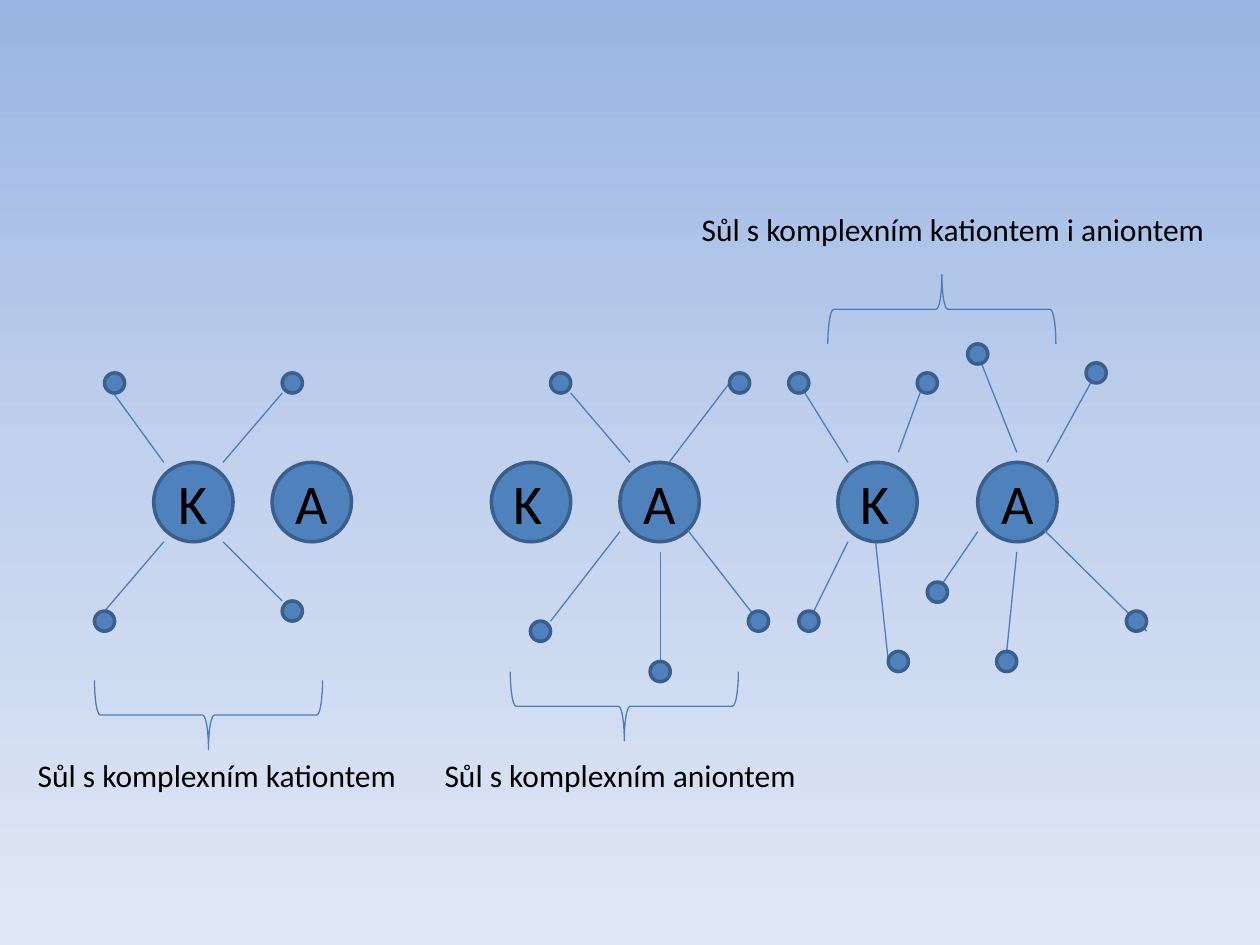
import copy
import pptx
import pptx.util
from pptx.dml.color import RGBColor
from pptx.enum.shapes import MSO_CONNECTOR, MSO_SHAPE
from pptx.enum.text import MSO_ANCHOR, PP_ALIGN
from pptx.oxml import parse_xml
from pptx.oxml.ns import nsdecls
from pptx.util import Inches

FILL, EDGE, THIN = "4F81BD", "3A5F8C", "4B7EBC"
BACKGROUND = [(0, "9AB5E4"), (0.5, "C2D1ED"), (1, "E1E8F5")]
ION, LIGAND = 0.63, 0.16
ION_TOP = 3.67
BRACE_W, BRACE_H = 0.55, 1.81

# ions: letter, left; letters: text boxes laid over an ion; bonds: start, end;
# ligands: left, top; brace: left, top, rotation; caption: text, left, top, width
SALTS = [
    dict(
        ions=[("K", 1.22), ("A", 2.16)],
        letters=[],
        bonds=[((1.77, 3.67), (2.24, 3.12)), ((1.3, 3.67), (0.9, 3.12)),
               ((1.77, 4.3), (2.24, 4.77)), ((1.3, 4.3), (0.83, 4.85))],
        ligands=[(0.83, 2.96), (2.24, 2.96), (0.75, 4.85), (2.24, 4.77)],
        brace=(1.38, 4.77, 270),
        caption=("Sůl s komplexním kationtem", 0.2, 5.95, 3.08),
    ),
    dict(
        ions=[("", 3.9), ("A", 4.92)],
        letters=[("K", 3.98)],
        bonds=[((5, 3.67), (4.53, 3.12)), ((5.31, 3.67), (5.79, 3.04)),
               ((5.46, 4.21), (6.02, 4.93)), ((5.24, 4.38), (5.24, 5.32)),
               ((4.92, 4.22), (4.37, 4.93))],
        ligands=[(4.37, 2.96), (5.79, 2.96), (4.21, 4.93), (5.16, 5.25), (5.94, 4.85)],
        brace=(4.68, 4.7, 270),
        caption=("Sůl s komplexním aniontem", 3.43, 5.95, 3.02),
    ),
    dict(
        ions=[("", 6.65), ("A", 7.76)],
        letters=[("K", 6.73)],
        bonds=[((6.73, 3.67), (6.34, 3.04)), ((7.13, 3.59), (7.36, 2.96)),
               ((6.73, 4.3), (6.42, 4.93)), ((6.95, 4.31), (7.05, 5.25)),
               ((8.07, 3.59), (7.76, 2.81)), ((8.31, 3.67), (8.7, 2.96)),
               ((8.29, 4.21), (9.1, 5.01)), ((8.07, 4.38), (7.99, 5.17)),
               ((7.76, 4.22), (7.44, 4.69))],
        ligands=[(6.26, 2.96), (7.28, 2.96), (6.34, 4.85), (7.05, 5.17), (7.36, 4.62),
                 (7.91, 5.17), (8.94, 4.85), (7.68, 2.73), (8.62, 2.88)],
        brace=(7.2, 1.55, 90),
        caption=("Sůl s komplexním kationtem i aniontem", 5.47, 1.62, 4.24),
    ),
]


def rgb(value):
    return RGBColor.from_string(value)


def write(sp, text, size=18, align=PP_ALIGN.LEFT, anchor=MSO_ANCHOR.TOP, color="000000"):
    tf = sp.text_frame
    tf.word_wrap = False
    tf.vertical_anchor = anchor
    p = tf.paragraphs[0]
    p.alignment = align
    r = p.add_run()
    r.text = text
    r.font.name = "Calibri"
    r.font.size = pptx.util.Pt(size)
    r.font.color.rgb = rgb(color)


def add_text(s, text, x, y, w, h, **style):
    write(s.shapes.add_textbox(*map(Inches, (x, y, w, h))), text, **style)


def add_shape(s, kind, x, y, w, h, fill=None, line=EDGE, width=2):
    sp = s.shapes.add_shape(kind, *map(Inches, (x, y, w, h)))
    sp.shadow.inherit = False
    if fill:
        sp.fill.solid()
        sp.fill.fore_color.rgb = rgb(fill)
    else:
        sp.fill.background()
    sp.line.color.rgb = rgb(line)
    sp.line.width = pptx.util.Pt(width)
    return sp


def add_bond(s, start, end):
    c = s.shapes.add_connector(MSO_CONNECTOR.STRAIGHT, *map(Inches, start + end))
    c.line.color.rgb = rgb(THIN)
    c.line.width = pptx.util.Pt(0.75)
    c._element.spPr.append(parse_xml(f"<a:effectLst {nsdecls('a')}/>"))


def set_background(s):
    fill = s.background.fill
    fill.gradient()
    fill.gradient_angle = 270
    last = fill.gradient_stops[1]._gs
    last.addprevious(copy.deepcopy(last))
    for stop, (position, color) in zip(fill.gradient_stops, BACKGROUND):
        stop.position = position
        stop.color.rgb = rgb(color)


def add_salt(s, salt):
    for letter, x in salt["ions"]:
        sp = add_shape(s, MSO_SHAPE.OVAL, x, ION_TOP, ION, ION, fill=FILL)
        if letter:
            write(sp, letter, size=32, align=PP_ALIGN.CENTER, anchor=MSO_ANCHOR.MIDDLE)
    for letter, x in salt["letters"]:
        add_text(s, letter, x, ION_TOP, 0.44, 0.64, size=32)
    for start, end in salt["bonds"]:
        add_bond(s, start, end)
    x, y, rotation = salt["brace"]
    brace = add_shape(s, MSO_SHAPE.LEFT_BRACE, x, y, BRACE_W, BRACE_H, line=THIN, width=0.75)
    brace.rotation = rotation
    text, x, y, w = salt["caption"]
    add_text(s, text, x, y, w, 0.4)
    for x, y in salt["ligands"]:
        add_shape(s, MSO_SHAPE.FLOWCHART_CONNECTOR, x, y, LIGAND, LIGAND, fill=FILL)


def main():
    prs = pptx.Presentation()
    prs.slide_width, prs.slide_height = Inches(10), Inches(7.5)
    s = prs.slides.add_slide(prs.slide_layouts[6])
    set_background(s)
    for salt in SALTS:
        add_salt(s, salt)
    prs.save("out.pptx")


if __name__ == "__main__":
    main()
